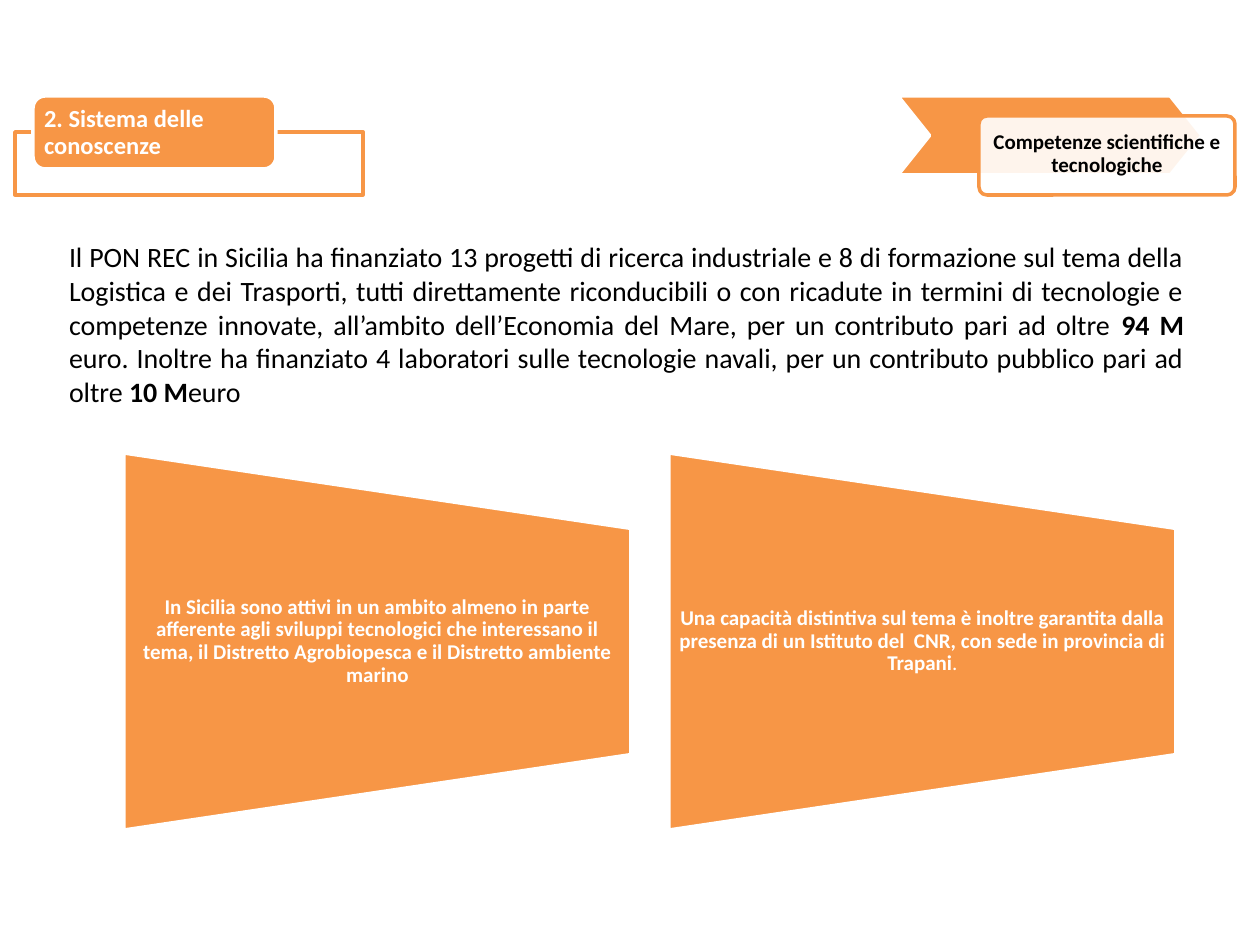
from lxml.etree import SubElement
from pptx import Presentation
from pptx.dml.color import RGBColor
from pptx.enum.shapes import MSO_SHAPE
from pptx.enum.text import MSO_ANCHOR, PP_ALIGN
from pptx.oxml.ns import qn
from pptx.util import Pt

EMU_PER_PX = 914400 / 126
COLORS = {"orange": "F79646", "white": "FFFFFF", "black": "000000"}
FONT = "Calibri"
INTRO = (
    "Il PON REC in Sicilia ha finanziato 13 progetti di ricerca industriale e 8 di "
    "formazione sul tema della Logistica e dei Trasporti, tutti direttamente "
    "riconducibili o con ricadute in termini di tecnologie e competenze innovate, "
    "all’ambito dell’Economia del Mare, per un contributo pari ad oltre **94 M** euro. "
    "Inoltre ha finanziato 4 laboratori sulle tecnologie navali, per un contributo "
    "pubblico pari ad oltre **10 M**euro"
)
PANELS = [
    "**In Sicilia sono attivi in un ambito almeno in parte afferente agli sviluppi "
    "tecnologici che interessano il tema, il Distretto Agrobiopesca e il Distretto "
    "ambiente marino**",
    "**Una capacità distintiva sul tema è inoltre garantita dalla presenza di un "
    "Istituto del  CNR, con sede in provincia di Trapani**.",
]


def px(value):
    return round(value * EMU_PER_PX)


def color(name):
    return RGBColor.from_string(COLORS[name])


def add_block(page, kind, area, fill="orange", line="white", opacity=100,
              rotation=0, adjustment=None):
    shape = page.shapes.add_shape(kind, *map(px, area))
    shape.shadow.inherit = False
    shape.rotation = rotation
    shape.fill.solid()
    shape.fill.fore_color.rgb = color(fill)
    shape.line.color.rgb = color(line)
    shape.line.width = Pt(2)
    if adjustment is not None:
        shape.adjustments[0] = adjustment
    if opacity < 100:
        fill_color = shape.fill._xPr.find(qn("a:solidFill"))[0]
        SubElement(fill_color, qn("a:alpha"), val=str(opacity * 1000))


def add_text(page, text, area, size=12, ink="white", align=PP_ALIGN.CENTER,
             anchor=MSO_ANCHOR.MIDDLE, insets=(10, 0), spacing=0.9):
    box = page.shapes.add_textbox(*map(px, area))
    frame = box.text_frame
    frame.word_wrap = True
    frame.vertical_anchor = anchor
    frame.margin_left = frame.margin_right = px(insets[0])
    frame.margin_top = frame.margin_bottom = px(insets[1])
    paragraph = frame.paragraphs[0]
    paragraph.alignment = align
    paragraph.line_spacing = spacing
    for index, part in enumerate(text.split("**")):
        if part:
            span = paragraph.add_run()
            span.text = part
            span.font.name = FONT
            span.font.size = Pt(size)
            span.font.bold = index % 2 == 1
            span.font.color.rgb = color(ink)


def add_section_heading(page):
    add_block(page, MSO_SHAPE.RECTANGLE, (15, 132, 348, 63),
              fill="white", line="orange", opacity=90)
    add_block(page, MSO_SHAPE.ROUNDED_RECTANGLE, (33, 96, 243, 73))
    add_text(page, "**2. Sistema delle conoscenze**", (35, 100, 236, 66),
             size=14, align=PP_ALIGN.LEFT, insets=(9, 0))


def add_topic_heading(page):
    add_block(page, MSO_SHAPE.CHEVRON, (898, 96, 304, 79), adjustment=0.4)
    add_block(page, MSO_SHAPE.ROUNDED_RECTANGLE, (979, 116, 256, 79),
              fill="white", line="orange", opacity=90, adjustment=0.1)
    add_text(page, "**Competenze scientifiche e tecnologiche**",
             (981, 117, 252, 75), ink="black", insets=(11, 11))


def add_panel(page, text, left):
    width, height, top = 507, 377, 453
    offset = (width - height) // 2
    add_block(page, MSO_SHAPE.FLOWCHART_MANUAL_OPERATION,
              (left + offset, top - offset, height, width), rotation=270)
    add_text(page, text, (left, 528, width, 227))


def main():
    deck = Presentation()
    deck.slide_width, deck.slide_height = px(1260), px(945)
    page = deck.slides.add_slide(deck.slide_layouts[6])
    add_section_heading(page)
    add_topic_heading(page)
    for index, text in enumerate(PANELS):
        add_panel(page, text, 124 + index * 545)
    add_text(page, INTRO, (57, 234, 1139, 183), size=16, ink="black",
             align=PP_ALIGN.JUSTIFY, anchor=MSO_ANCHOR.TOP,
             insets=(12, 6), spacing=1.0)
    deck.save("out.pptx")


if __name__ == "__main__":
    main()
